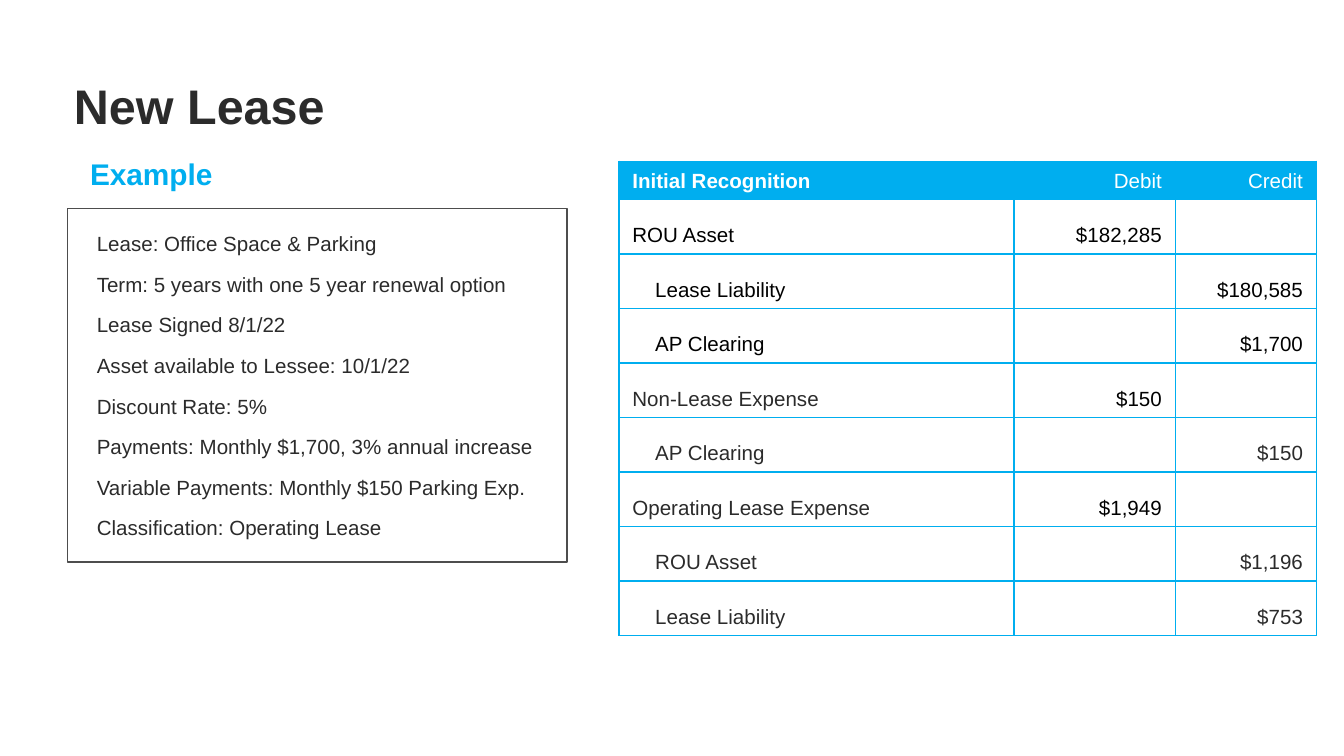
from lxml import etree
from pptx import Presentation
from pptx.dml.color import RGBColor
from pptx.enum.shapes import MSO_SHAPE
from pptx.enum.text import MSO_ANCHOR, PP_ALIGN
from pptx.oxml.ns import qn
from pptx.util import Inches, Pt

DARK = RGBColor(0x2B, 0x2B, 0x2B)
BLACK = RGBColor(0, 0, 0)
WHITE = RGBColor(0xFF, 0xFF, 0xFF)
CYAN = RGBColor(0x00, 0xAE, 0xEF)
GRAY = RGBColor(0x4D, 0x4D, 0x4D)

TERMS = [
    "Lease: Office Space & Parking",
    "Term: 5 years with one 5 year renewal option",
    "Lease Signed 8/1/22",
    "Asset available to Lessee: 10/1/22",
    "Discount Rate: 5%",
    "Payments: Monthly $1,700, 3% annual increase",
    "Variable Payments: Monthly $150 Parking Exp.",
    "Classification: Operating Lease",
]
HEADINGS = ["Initial Recognition", "Debit", "Credit"]
ENTRIES = [
    ("ROU Asset", "$182,285", "", BLACK),
    ("Lease Liability", "", "$180,585", BLACK),
    ("AP Clearing", "", "$1,700", BLACK),
    ("Non-Lease Expense", "$150", "", DARK),
    ("AP Clearing", "", "$150", DARK),
    ("Operating Lease Expense", "$1,949", "", DARK),
    ("ROU Asset", "", "$1,196", DARK),
    ("Lease Liability", "", "$753", DARK),
]


def write(paragraph, text, size=11, color=DARK, bold=False, align=PP_ALIGN.LEFT,
          spacing=1.0, left=0, first=0):
    props = paragraph._p.get_or_add_pPr()
    props.set("marL", str(Inches(left)))
    props.set("indent", str(Inches(first)))
    paragraph.alignment = align
    paragraph.line_spacing = spacing
    run = paragraph.add_run()
    run.text = text
    font = run.font
    font.name, font.size, font.bold = "Arial", Pt(size), bold
    font.color.rgb = color


class LeaseSlide:
    def __init__(self, deck):
        self.width, self.height = deck.slide_width, deck.slide_height
        self.slide = deck.slides.add_slide(deck.slide_layouts[6])

    def area(self, x, y, w, h):
        return (round(x * self.width / 100), round(y * self.height / 100),
                round(w * self.width / 100), round(h * self.height / 100))

    def prepare(self, frame):
        frame.word_wrap = True
        frame.vertical_anchor = MSO_ANCHOR.TOP
        frame.margin_left = frame.margin_right = Inches(0.05)
        frame.margin_top = frame.margin_bottom = Inches(0.05)
        return frame

    def heading(self, text, area, **style):
        box = self.slide.shapes.add_textbox(*self.area(*area))
        frame = self.prepare(box.text_frame)
        write(frame.paragraphs[0], text, bold=True, **style)

    def panel(self, lines, area):
        box = self.slide.shapes.add_shape(MSO_SHAPE.RECTANGLE, *self.area(*area))
        box.shadow.inherit = False
        box.fill.background()
        box.line.color.rgb = GRAY
        box.line.width = Pt(0.75)
        frame = self.prepare(box.text_frame)
        for index, line in enumerate(lines):
            paragraph = frame.add_paragraph() if index else frame.paragraphs[0]
            write(paragraph, line, spacing=1.65, left=0.17)

    def border(self, cell, **colors):
        props = cell._tc.get_or_add_tcPr()
        for position, side in enumerate("LRTB"):
            line = etree.Element(qn(f"a:ln{side}"), w=str(Pt(0.75)))
            fill = etree.SubElement(line, qn("a:solidFill"))
            etree.SubElement(fill, qn("a:srgbClr"), val=str(colors.get(side, CYAN)))
            props.insert(position, line)

    def cell(self, cell, text, fill, indent=0, **style):
        cell.fill.solid()
        cell.fill.fore_color.rgb = fill
        cell.vertical_anchor = MSO_ANCHOR.BOTTOM
        cell.margin_left = Inches(0.1 + indent)
        cell.margin_right = Inches(0.1)
        cell.margin_top = cell.margin_bottom = Inches(0.05)
        if text:
            write(cell.text_frame.paragraphs[0], text, **style)

    def journal(self, headings, entries, area, columns, header_height, row_height):
        frame = self.slide.shapes.add_table(len(entries) + 1, len(headings), *self.area(*area))
        table = frame.table
        for column, width in zip(table.columns, columns):
            column.width = Inches(width)
        for index, row in enumerate(table.rows):
            row.height = row_height if index else header_height
        sides = [PP_ALIGN.LEFT, PP_ALIGN.RIGHT, PP_ALIGN.RIGHT]
        for index, (text, align) in enumerate(zip(headings, sides)):
            self.cell(table.cell(0, index), text, CYAN, color=WHITE, bold=index == 0, align=align)
            self.border(table.cell(0, index), B=WHITE)
        for row, (account, debit, credit, color) in enumerate(entries, 1):
            shades = [color, BLACK, color]
            for index, text in enumerate((account, debit, credit)):
                indent = 0.17 if credit and index == 0 else 0
                self.cell(table.cell(row, index), text, WHITE, indent,
                          color=shades[index], align=sides[index])
                self.border(table.cell(row, index))


def main():
    deck = Presentation()
    deck.slide_width = Inches(10)
    deck.slide_height = deck.slide_width * 9 // 16
    page = LeaseSlide(deck)
    page.heading("New Lease", (5, 8, 67.5, 9.78), size=26, spacing=1.15)
    page.heading("Example", (5, 17.78, 67.5, 6.04), size=16, color=CYAN, spacing=1.4,
                 left=0.5, first=-0.38)
    page.panel(TERMS, (5, 27.56, 37.2, 46.76))
    page.journal(HEADINGS, ENTRIES, (46.05, 21.33, 51.9, 58.31),
                 columns=(2.94, 1.2, 1.05), header_height=Inches(0.15), row_height=Pt(29.2))
    deck.save("out.pptx")


if __name__ == "__main__":
    main()
